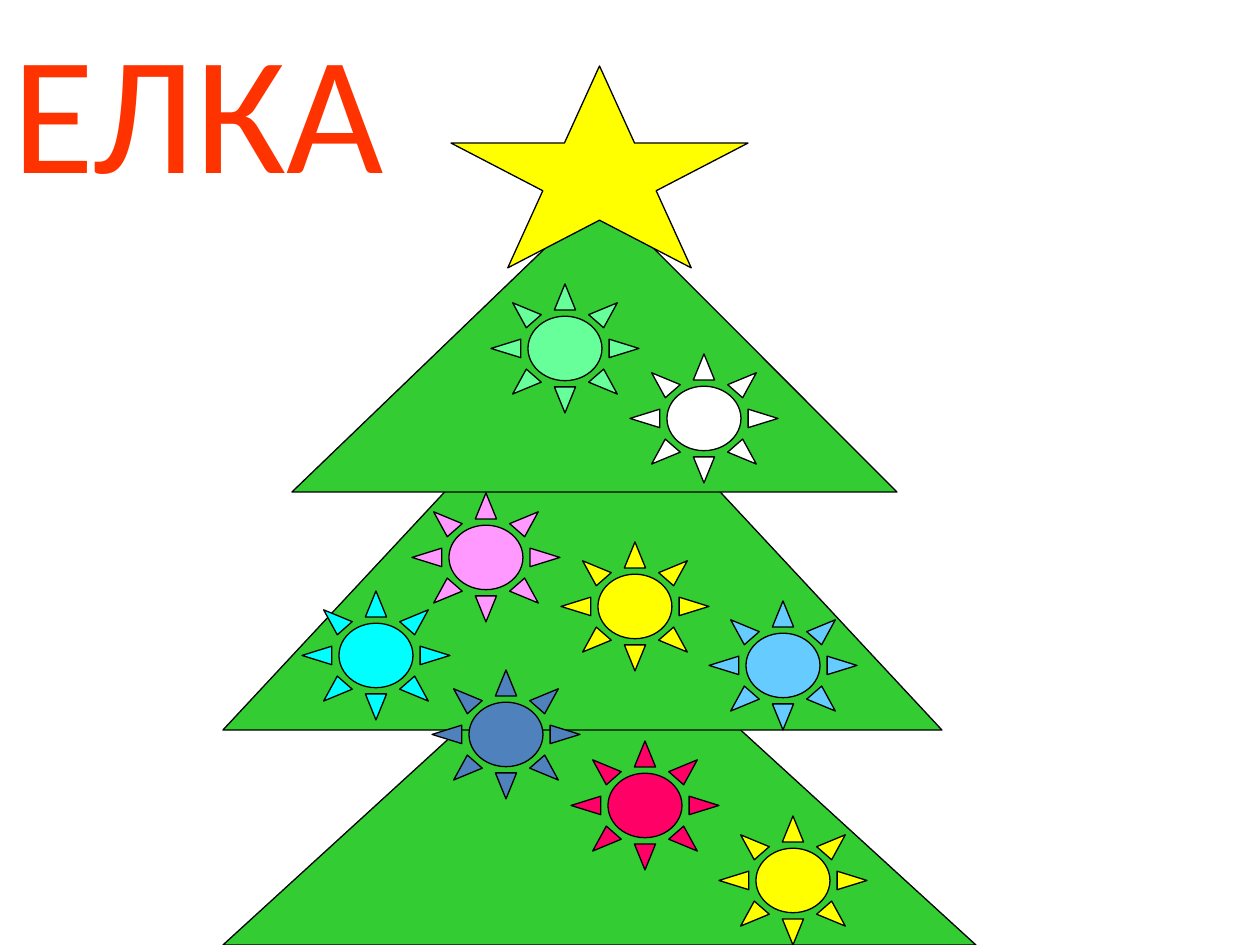
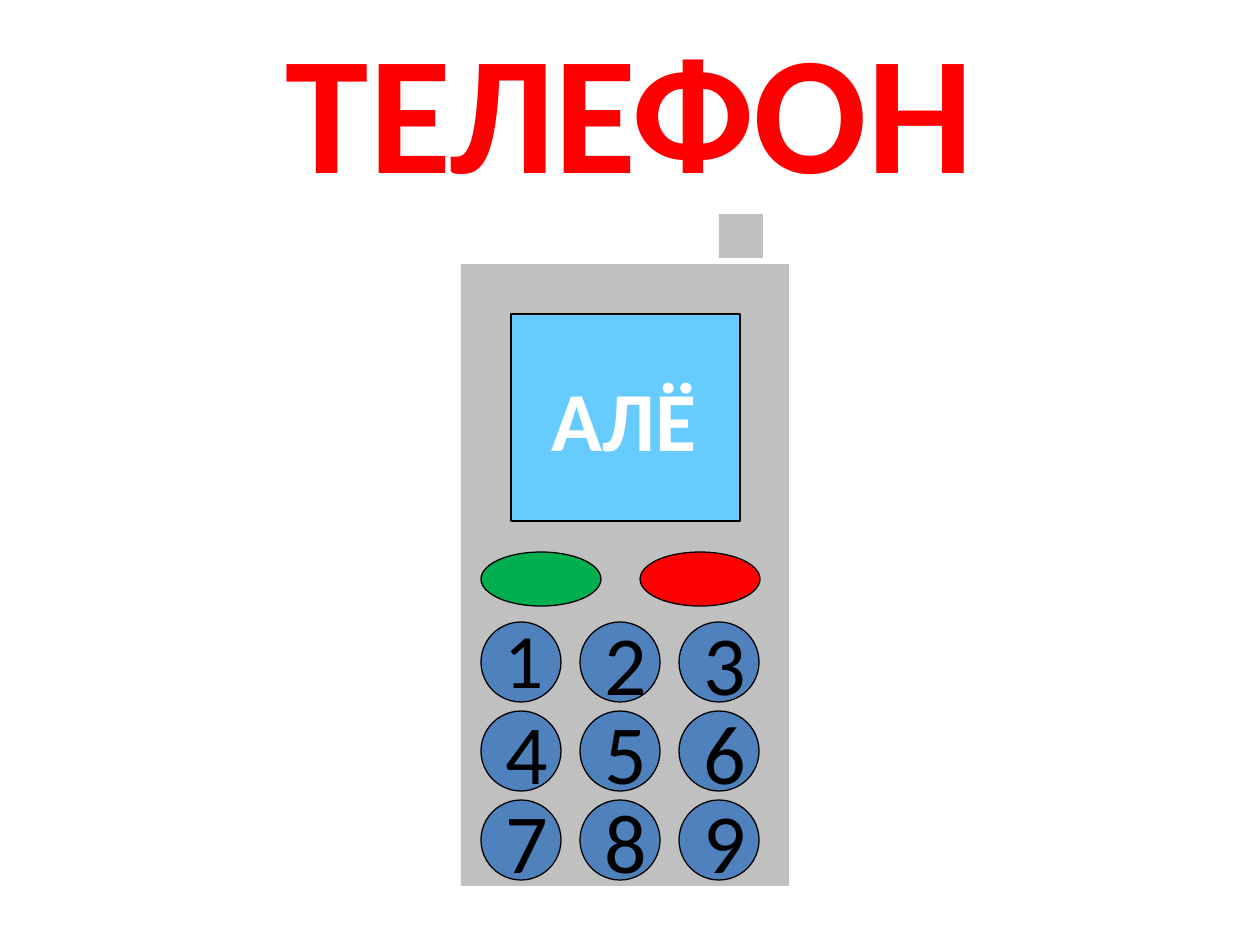
"""Build two slides, a decorated fir tree and a mobile phone, from preset shapes."""
from dataclasses import dataclass
from typing import Optional

from pptx import Presentation
from pptx.dml.color import RGBColor
from pptx.enum.shapes import MSO_SHAPE
from pptx.enum.text import MSO_ANCHOR, PP_ALIGN
from pptx.util import Emu, Pt

EMU_PER_INCH = 914400
PX_PER_INCH = 126
SLIDE_W, SLIDE_H = 1260, 945
FONT = "Calibri"
BLACK, WHITE, RED = "000000", "FFFFFF", "FF0000"
FIR, GOLD, SKY = "33CC33", "FFFF00", "66CCFF"
CASE, KEY = "C0C0C0", "4F81BD"
INSET_X, INSET_Y = 13, 6
TITLE_H, TITLE_SIZE = 217, 96
SUN_W, SUN_H = 148, 129
KEY_SIZE, KEY_LEFT, KEY_TOP, KEY_STEP_X, KEY_STEP_Y = 80, 481, 622, 99, 89


@dataclass(frozen=True)
class Figure:
    """A filled preset shape, placed in px."""
    kind: MSO_SHAPE
    x: int
    y: int
    w: int
    h: int
    fill: str
    line: Optional[str] = BLACK
    adj: Optional[float] = None


@dataclass(frozen=True)
class Sun:
    """A sun-shaped bauble."""
    x: int
    y: int
    fill: str


TIERS = [
    Figure(MSO_SHAPE.ISOSCELES_TRIANGLE, 223, 601, 753, 344, FIR),
    Figure(MSO_SHAPE.ISOSCELES_TRIANGLE, 223, 344, 719, 386, FIR),
    Figure(MSO_SHAPE.ISOSCELES_TRIANGLE, 292, 195, 605, 297, FIR, adj=0.51),
]
SUNS = [
    Sun(302, 591, "00FFFF"),
    Sun(432, 670, KEY),
    Sun(491, 284, "66FF99"),
    Sun(412, 493, "FF99FF"),
    Sun(571, 741, "FF0066"),
    Sun(719, 816, GOLD),
    Sun(630, 354, WHITE),
    Sun(709, 601, SKY),
    Sun(561, 542, GOLD),
]
STAR = Figure(MSO_SHAPE.STAR_5_POINT, 451, 66, 297, 202, GOLD)

BODY = Figure(MSO_SHAPE.RECTANGLE, 461, 264, 328, 622, CASE, line=None)
ANTENNA = Figure(MSO_SHAPE.RECTANGLE, 719, 214, 44, 44, CASE, line=None)
SCREEN = Figure(MSO_SHAPE.RECTANGLE, 511, 314, 229, 207, SKY)
CALL = Figure(MSO_SHAPE.OVAL, 481, 552, 120, 54, "00B050")
HANG_UP = Figure(MSO_SHAPE.OVAL, 640, 552, 120, 54, RED)


def px(n: int) -> Emu:
    """Turn px into EMU."""
    return Emu(round(n * EMU_PER_INCH / PX_PER_INCH))


def rgb(value: str) -> RGBColor:
    """Turn a hex string into a colour."""
    return RGBColor.from_string(value)


def add_figure(s, fig: Figure):
    """Draw a preset shape and return it."""
    sp = s.shapes.add_shape(fig.kind, px(fig.x), px(fig.y), px(fig.w), px(fig.h))
    sp.shadow.inherit = False
    sp.fill.solid()
    sp.fill.fore_color.rgb = rgb(fig.fill)
    if fig.line:
        sp.line.color.rgb = rgb(fig.line)
        sp.line.width = Pt(0.75)
    else:
        sp.line.fill.background()
    if fig.adj is not None:
        sp.adjustments[0] = fig.adj
    return sp


def write(sp, text: str, *, size: int, color: str = BLACK, bold: bool = False,
          wrap: bool = False, anchor=MSO_ANCHOR.MIDDLE, left: int = INSET_X) -> None:
    """Put one left-aligned line of text into a shape."""
    tf = sp.text_frame
    tf.word_wrap = wrap
    tf.vertical_anchor = anchor
    tf.margin_left, tf.margin_right = px(left), px(INSET_X)
    tf.margin_top = tf.margin_bottom = px(INSET_Y)
    p = tf.paragraphs[0]
    p.alignment = PP_ALIGN.LEFT
    r = p.add_run()
    r.text = text
    r.font.name = FONT
    r.font.size = Pt(size)
    r.font.bold = bold
    r.font.color.rgb = rgb(color)


def add_text(s, text: str, x: int, y: int, w: int, h: int, **style) -> None:
    """Add a top-anchored text box."""
    sp = s.shapes.add_textbox(px(x), px(y), px(w), px(h))
    write(sp, text, wrap=True, anchor=MSO_ANCHOR.TOP, **style)


def add_title(s, text: str, x: int, w: int, **style) -> None:
    """Add the large title at the top of a slide."""
    add_text(s, text, x, 0, w, TITLE_H, size=TITLE_SIZE, **style)


def draw_tree(s) -> None:
    """Draw the fir tree slide."""
    for tier in TIERS:
        add_figure(s, tier)
    for sun in SUNS:
        add_figure(s, Figure(MSO_SHAPE.SUN, sun.x, sun.y, SUN_W, SUN_H, sun.fill))
    add_figure(s, STAR)
    add_title(s, "ЕЛКА", 0, 689, color="FF3300")


def draw_keypad(s) -> None:
    """Draw the nine keys in a grid of three by three."""
    for i in range(9):
        row, col = divmod(i, 3)
        sp = add_figure(s, Figure(MSO_SHAPE.OVAL, KEY_LEFT + col * KEY_STEP_X,
                                  KEY_TOP + row * KEY_STEP_Y, KEY_SIZE, KEY_SIZE, KEY))
        if i:
            write(sp, str(i + 1), size=48)
    add_text(s, "1", 491, 606, 59, 106, size=44)


def draw_phone(s) -> None:
    """Draw the phone slide."""
    add_figure(s, BODY)
    write(add_figure(s, SCREEN), "АЛЁ", size=48, color=WHITE, bold=True, left=41)
    for fig in (CALL, HANG_UP, ANTENNA):
        add_figure(s, fig)
    draw_keypad(s)
    add_title(s, "ТЕЛЕФОН", 273, 714, color=RED, bold=True)


def main() -> None:
    """Build and save the presentation."""
    prs = Presentation()
    prs.slide_width, prs.slide_height = px(SLIDE_W), px(SLIDE_H)
    for draw in (draw_tree, draw_phone):
        draw(prs.slides.add_slide(prs.slide_layouts[6]))
    prs.save("out.pptx")


if __name__ == "__main__":
    main()
